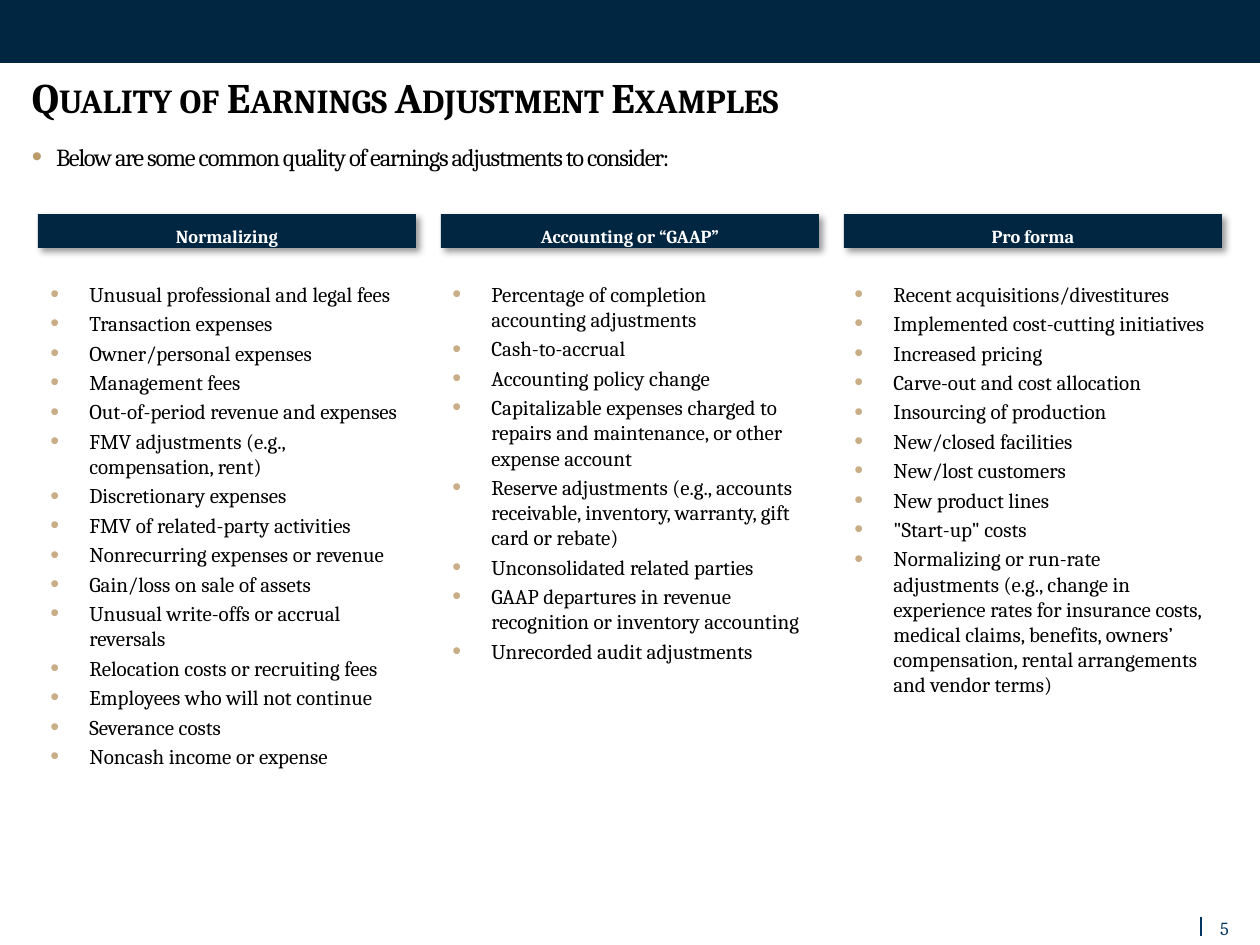
"""Build the slide of quality of earnings adjustment examples."""
from dataclasses import dataclass

import lxml.etree
import pptx
import pptx.dml.color
import pptx.enum.shapes
import pptx.enum.text
import pptx.oxml.ns
import pptx.util

PIXELS_PER_INCH = 126
ALIGN = pptx.enum.text.PP_ALIGN
ANCHOR = pptx.enum.text.MSO_ANCHOR


@dataclass(frozen=True)
class Theme:
    font: str = "Cambria"
    navy: str = "002641"
    page_blue: str = "00355F"
    gold: str = "BB9A69"
    pale_gold: str = "C8AD87"
    black: str = "000000"
    white: str = "FFFFFF"
    title_size: float = 24
    intro_size: float = 14
    list_size: float = 12
    small_size: float = 10.5


@dataclass(frozen=True)
class Box:
    left: int
    top: int
    width: int
    height: int


@dataclass(frozen=True)
class Category:
    heading: str
    examples: tuple[str, ...]


THEME = Theme()
HEADER = Box(38, 214, 378, 34)
HEADER_STEP = 403
LISTING = Box(38, 275, 378, 461)
LISTING_STEP = 402

CATEGORIES = (
    Category("Normalizing", (
        "Unusual professional and legal fees",
        "Transaction expenses",
        "Owner/personal expenses",
        "Management fees",
        "Out-of-period revenue and expenses",
        "FMV adjustments (e.g., compensation, rent)",
        "Discretionary expenses",
        "FMV of related-party activities",
        "Nonrecurring expenses or revenue",
        "Gain/loss on sale of assets",
        "Unusual write-offs or accrual reversals",
        "Relocation costs or recruiting fees",
        "Employees who will not continue",
        "Severance costs",
        "Noncash income or expense",
    )),
    Category("Accounting or “GAAP”", (
        "Percentage of completion accounting adjustments",
        "Cash-to-accrual",
        "Accounting policy change",
        "Capitalizable expenses charged to repairs and maintenance, or other expense account",
        "Reserve adjustments (e.g., accounts receivable, inventory, warranty, gift card or rebate)",
        "Unconsolidated related parties",
        "GAAP departures in revenue recognition or inventory accounting",
        "Unrecorded audit adjustments",
    )),
    Category("Pro forma", (
        "Recent acquisitions/divestitures",
        "Implemented cost-cutting initiatives",
        "Increased pricing",
        "Carve-out and cost allocation",
        "Insourcing of production",
        "New/closed facilities",
        "New/lost customers",
        "New product lines",
        '"Start-up" costs',
        "Normalizing or run-rate adjustments (e.g., change in experience rates for insurance "
        "costs, medical claims, benefits, owners’ compensation, rental arrangements and vendor terms)",
    )),
)


def px(length: int) -> pptx.util.Emu:
    return pptx.util.Emu(round(length * 914400 / PIXELS_PER_INCH))


def color(value: str) -> pptx.dml.color.RGBColor:
    return pptx.dml.color.RGBColor.from_string(value)


def bounds(box: Box) -> tuple:
    return px(box.left), px(box.top), px(box.width), px(box.height)


def add_child(parent, tag: str, **attributes: str):
    return lxml.etree.SubElement(parent, pptx.oxml.ns.qn(tag), attributes)


def write(text_frame, text: str, size: float, ink: str, bold=False, align=ALIGN.LEFT) -> None:
    text_frame.word_wrap = True
    text_frame.text = text
    for paragraph in text_frame.paragraphs:
        paragraph.alignment = align
        for run in paragraph.runs:
            run.font.name = THEME.font
            run.font.size = pptx.util.Pt(size)
            run.font.bold = bold
            run.font.color.rgb = color(ink)


def set_margins(text_frame, horizontal: int, vertical: int) -> None:
    text_frame.margin_left = text_frame.margin_right = px(horizontal)
    text_frame.margin_top = text_frame.margin_bottom = px(vertical)


def add_bullet(paragraph, indent: int, ink: str) -> None:
    properties = paragraph._p.get_or_add_pPr()
    properties.set("marL", str(px(indent)))
    properties.set("indent", str(-px(indent)))
    add_child(add_child(properties, "a:buClr"), "a:srgbClr", val=ink)
    add_child(properties, "a:buSzPct", val="120000")
    add_child(properties, "a:buFont", typeface="Arial")
    add_child(properties, "a:buChar", char="•")


def add_bar(slide, box: Box):
    shape = slide.shapes.add_shape(pptx.enum.shapes.MSO_SHAPE.RECTANGLE, *bounds(box))
    shape.fill.solid()
    shape.fill.fore_color.rgb = color(THEME.navy)
    shape.line.fill.background()
    shape.shadow.inherit = False
    return shape


def add_title(slide) -> None:
    title = slide.shapes.title
    title.left, title.top, title.width, title.height = bounds(Box(26, 71, 1152, 62))
    text_frame = title.text_frame
    text_frame.auto_size = pptx.enum.text.MSO_AUTO_SIZE.NONE
    text_frame.vertical_anchor = ANCHOR.TOP
    set_margins(text_frame, 6, 6)
    write(text_frame, "Quality of Earnings Adjustment Examples", THEME.title_size, THEME.black, True)
    paragraph = text_frame.paragraphs[0]
    paragraph.line_spacing = 0.9
    paragraph.runs[0].font._element.set("cap", "small")


def add_intro(slide) -> None:
    text_frame = slide.shapes.add_textbox(*bounds(Box(26, 136, 1177, 711))).text_frame
    set_margins(text_frame, 6, 6)
    write(text_frame, "Below are some common quality of earnings adjustments to consider:",
          THEME.intro_size, THEME.black, align=ALIGN.JUSTIFY)
    paragraph = text_frame.paragraphs[0]
    add_bullet(paragraph, 24, THEME.gold)
    paragraph.runs[0].font._element.set("spc", "-70")


def add_header(slide, heading: str, box: Box) -> None:
    shape = add_bar(slide, box)
    effects = shape._element.spPr.find(pptx.oxml.ns.qn("a:effectLst"))
    shadow = add_child(effects, "a:outerShdw", blurRad="50800", dist="38100", dir="2700000",
                       algn="tl", rotWithShape="0")
    add_child(add_child(shadow, "a:srgbClr", val=THEME.black), "a:alpha", val="40000")
    shape.text_frame.vertical_anchor = ANCHOR.MIDDLE
    write(shape.text_frame, heading, THEME.small_size, THEME.white, True, ALIGN.CENTER)
    shape.text_frame.paragraphs[0].line_spacing = 1.5


def add_examples(slide, examples: tuple[str, ...], box: Box) -> None:
    text_frame = slide.shapes.add_textbox(*bounds(box)).text_frame
    write(text_frame, "\n".join(examples), THEME.list_size, THEME.black)
    for index, paragraph in enumerate(text_frame.paragraphs):
        add_bullet(paragraph, 39, THEME.pale_gold)
        if index:
            paragraph.space_before = pptx.util.Pt(0.2 * THEME.list_size)


def add_page_number(slide) -> None:
    divider = slide.shapes.add_connector(
        pptx.enum.shapes.MSO_CONNECTOR.STRAIGHT, px(1201), px(917), px(1201), px(936))
    divider.line.color.rgb = color(THEME.page_blue)
    divider.line.width = pptx.util.Pt(0.75)
    add_child(divider._element.spPr, "a:effectLst")
    text_frame = slide.shapes.add_textbox(*bounds(Box(1197, 912, 55, 30))).text_frame
    set_margins(text_frame, 11, 5)
    write(text_frame, "5", THEME.small_size, THEME.page_blue, align=ALIGN.CENTER)


def main() -> None:
    presentation = pptx.Presentation()
    presentation.slide_width, presentation.slide_height = px(1260), px(945)
    slide = presentation.slides.add_slide(presentation.slide_layouts.get_by_name("Title Only"))
    add_bar(slide, Box(0, 0, 1260, 63))
    add_page_number(slide)
    add_title(slide)
    add_intro(slide)
    for column, category in enumerate(CATEGORIES):
        header_left = HEADER.left + column * HEADER_STEP
        listing_left = LISTING.left + column * LISTING_STEP
        add_header(slide, category.heading, Box(header_left, HEADER.top, HEADER.width, HEADER.height))
        add_examples(slide, category.examples,
                     Box(listing_left, LISTING.top, LISTING.width, LISTING.height))
    presentation.save("out.pptx")


if __name__ == "__main__":
    main()
